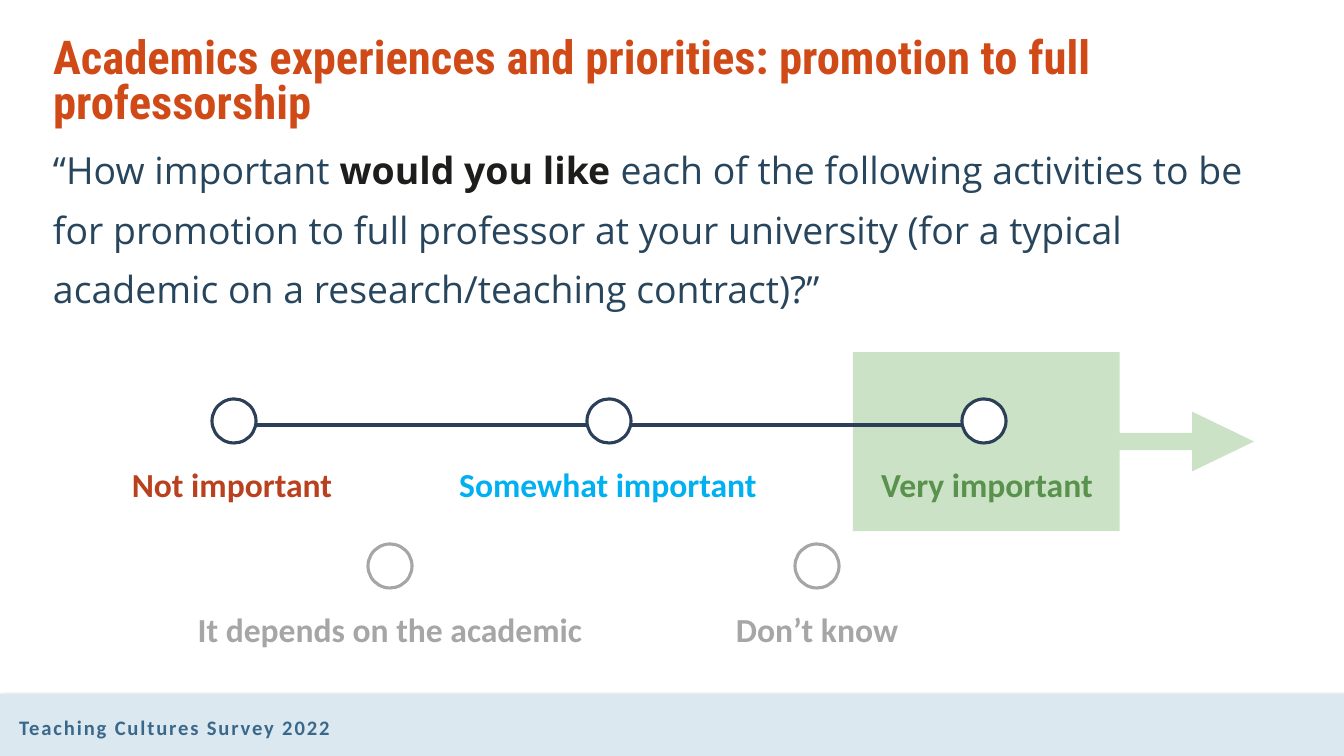
from lxml import etree
from pptx import Presentation
from pptx.dml.color import RGBColor
from pptx.enum.shapes import MSO_CONNECTOR, MSO_SHAPE
from pptx.enum.text import MSO_ANCHOR, MSO_AUTO_SIZE, PP_ALIGN
from pptx.oxml import parse_xml
from pptx.oxml.ns import nsdecls, qn
from pptx.util import Emu, Pt

RECTANGLE, CIRCLE = MSO_SHAPE.RECTANGLE, MSO_SHAPE.OVAL
CALLOUT = MSO_SHAPE.RIGHT_ARROW_CALLOUT
STRAIGHT = MSO_CONNECTOR.STRAIGHT
TOP = MSO_ANCHOR.TOP
LEFT, CENTER = PP_ALIGN.LEFT, PP_ALIGN.CENTER
FIT_SHAPE = MSO_AUTO_SIZE.SHAPE_TO_FIT_TEXT

WHITE = RGBColor(0xFF, 0xFF, 0xFF)
ORANGE = RGBColor(0xD0, 0x4A, 0x18)
SLATE = RGBColor(0x27, 0x45, 0x5D)
BLACK = RGBColor(0x1D, 0x1D, 0x1B)
NAVY = RGBColor(0x2C, 0x3F, 0x58)
RED = RGBColor(0xBA, 0x41, 0x1E)
SKY = RGBColor(0x00, 0xB0, 0xF0)
GREEN = RGBColor(0x59, 0x92, 0x4C)
GREY = RGBColor(0xA6, 0xA6, 0xA6)
PALE_GREEN = RGBColor(0xCC, 0xE2, 0xC7)
PALE_BLUE = RGBColor(0xDC, 0xE8, 0xF0)
BLUE = RGBColor(0x3A, 0x68, 0x8B)

# Content: runs are (text, bold, colour)
TITLE = [("Academics experiences and priorities: promotion to full professorship", True, ORANGE)]
QUESTION = [
    ("“How important ", False, SLATE),
    ("would you like ", True, BLACK),
    ("each of the following activities to be for promotion to full professor at your "
     "university (for a typical academic on a research/teaching contract)?”", False, SLATE),
]
FOOTER = [("Teaching Cultures Survey 2022", True, BLUE)]

# Answers: text, text colour, circle colour, circle centre x, label centre x, label width
SCALE_ANSWERS = [
    ("Not important", RED, NAVY, 234, 232, 223),
    ("Somewhat important", SKY, NAVY, 609, 608, 321),
    ("Very important", GREEN, NAVY, 984, 987, 234),
]
OTHER_ANSWERS = [
    ("It depends on the academic", GREY, GREY, 390, 390, 409),
    ("Don’t know", GREY, GREY, 817, 817, 184),
]
# Rows: answers, circle centre y, label top
ROWS = [(SCALE_ANSWERS, 421, 459), (OTHER_ANSWERS, 566, 604)]

PX = 12192000 / 1344
WIDTH, HEIGHT = 1344, 756
CIRCLE_SIZE, LABEL_HEIGHT, SCALE_Y = 44, 50, 425
CALLOUT_ADJUSTMENTS = (0.097, 0.167, 0.346, 0.665)


def px(*lengths):
    return [Emu(round(length * PX)) for length in lengths]


presentation = Presentation()
presentation.slide_width, presentation.slide_height = px(WIDTH, HEIGHT)
slide = presentation.slides.add_slide(presentation.slide_layouts[6])


def add_shape(kind, box, fill, line=None):
    shape = slide.shapes.add_shape(kind, *px(*box))
    shape.shadow.inherit = False
    shape.fill.solid()
    shape.fill.fore_color.rgb = fill
    if line is None:
        shape.line.fill.background()
    else:
        shape.line.color.rgb = line
        shape.line.width = Pt(2.25)
    return shape


def add_text(box, runs, font, size, align=LEFT, wrap=True, inset=0):
    text_box = slide.shapes.add_textbox(*px(*box))
    frame = text_box.text_frame
    frame.word_wrap = wrap
    frame.vertical_anchor = TOP
    frame.margin_left = frame.margin_right = px(inset)[0]
    frame.margin_top = frame.margin_bottom = px(inset / 2)[0]
    if not wrap:
        frame.auto_size = FIT_SHAPE
    paragraph = frame.paragraphs[0]
    paragraph.alignment = align
    for text, bold, color in runs:
        run = paragraph.add_run()
        run.text = text
        run.font.name = font
        run.font.size = Pt(size)
        run.font.bold = bold
        run.font.color.rgb = color
    return paragraph


# Footer band with a soft shadow
band = add_shape(RECTANGLE, (0, 694, WIDTH, 62), PALE_BLUE)
effects = band._element.spPr.find(qn("a:effectLst"))
effects.append(parse_xml(
    f'<a:outerShdw {nsdecls("a")} blurRad="{Pt(3.1)}" dist="{Pt(1.8)}" dir="5400000" '
    'rotWithShape="0"><a:srgbClr val="000000"><a:alpha val="35000"/></a:srgbClr></a:outerShdw>'))
footer = add_text((19, 715, 839, 25), FOOTER, "Calibri", 14.7)
footer.runs[0].font._element.set("spc", "130")

# Highlight behind the last answer
highlight = add_shape(CALLOUT, (853, 352, 401, 179), PALE_GREEN)
for index, value in enumerate(CALLOUT_ADJUSTMENTS):
    highlight.adjustments[index] = value

# Line of the scale
first_x, last_x = SCALE_ANSWERS[0][3], SCALE_ANSWERS[-1][3]
scale_line = slide.shapes.add_connector(STRAIGHT, *px(first_x, SCALE_Y, last_x, SCALE_Y))
scale_line.line.color.rgb = NAVY
scale_line.line.width = Pt(2.5)
etree.SubElement(scale_line._element.spPr, qn("a:effectLst"))

# Answers: circle and label
for answers, circle_y, label_top in ROWS:
    for text, text_color, circle_color, circle_x, label_x, label_width in answers:
        add_shape(CIRCLE, (circle_x - CIRCLE_SIZE / 2, circle_y - CIRCLE_SIZE / 2,
                           CIRCLE_SIZE, CIRCLE_SIZE), WHITE, circle_color)
        add_text((label_x - label_width / 2, label_top, label_width, LABEL_HEIGHT),
                 [(text, True, text_color)], "Calibri", 24, CENTER, wrap=False, inset=10)

# Question and title
question = add_text((53, 132, 1238, 508), QUESTION, "Open Sans", 26.7)
question.line_spacing = Pt(42.7)
question.space_after = Pt(26.7)
title = add_text((53, 39, 1291, 95), TITLE, "Roboto Condensed", 33.3)
title.line_spacing = 0.8

presentation.save("out.pptx")
